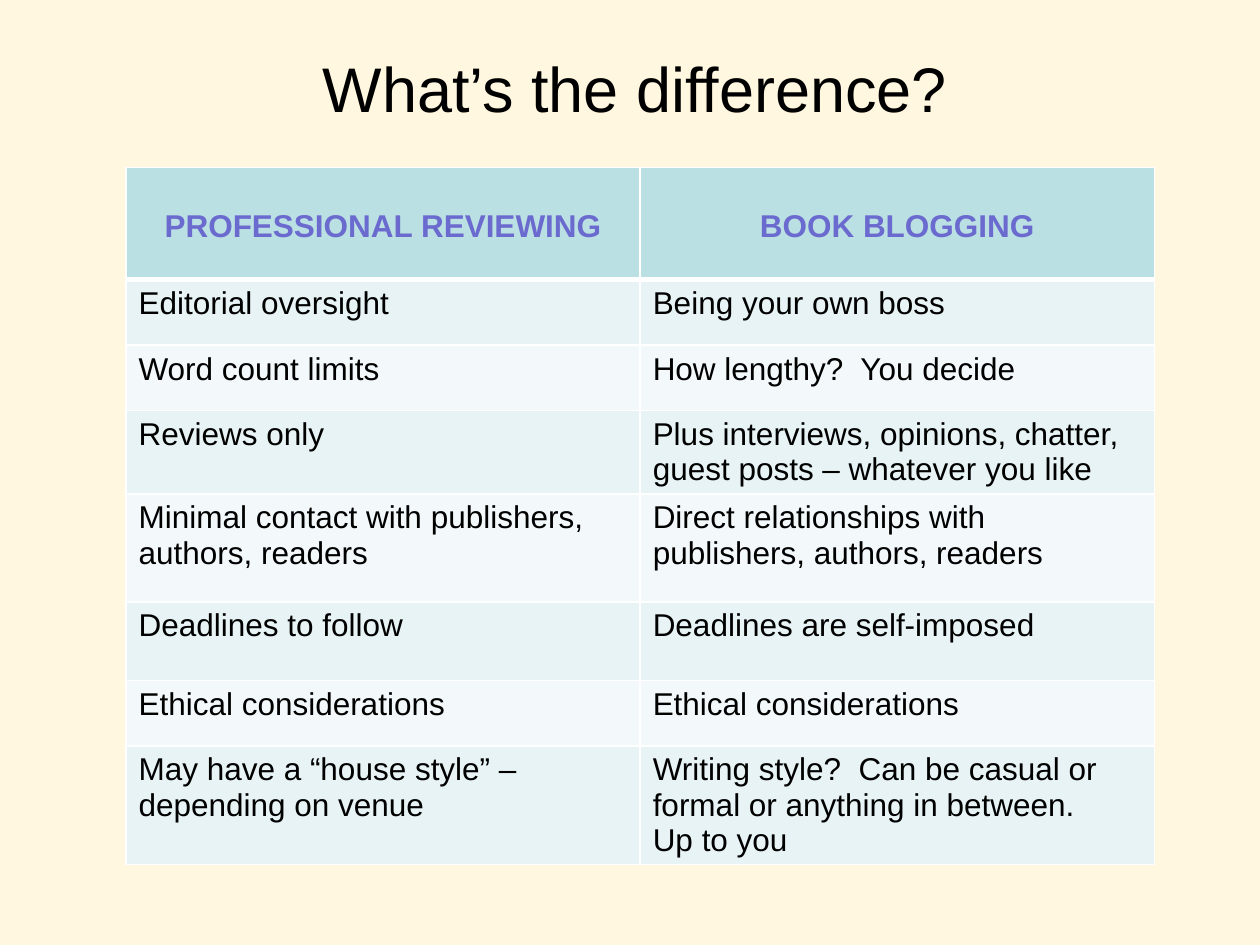
from dataclasses import dataclass

from lxml.etree import SubElement
from pptx import Presentation
from pptx.dml.color import RGBColor
from pptx.enum.text import MSO_ANCHOR as Anchor, PP_ALIGN as Align
from pptx.oxml.ns import qn
from pptx.util import Cm, Pt

FONT = "Arial"
COLOURS = {
    "page": "FFF7DF",
    "title": "000000",
    "header_text": "6B6BCF",
    "header_fill": "BBE0E3",
    "body_text": "000000",
    "odd_fill": "E7F3F4",
    "even_fill": "F3F9FA",
    "border": "FFFFFF",
}
THIN, THICK = 1, 3


@dataclass
class Row:
    height: float
    reviewing: str
    blogging: str


ROWS = [
    Row(2.26, "PROFESSIONAL REVIEWING", "BOOK BLOGGING"),
    Row(1.32, "Editorial oversight", "Being your own boss"),
    Row(1.32, "Word count limits", "How lengthy?  You decide"),
    Row(1.66, "Reviews only",
        "Plus interviews, opinions, chatter, guest posts – whatever you like"),
    Row(2.18, "Minimal contact with publishers, authors, readers",
        "Direct relationships with publishers, authors, readers"),
    Row(1.58, "Deadlines to follow", "Deadlines are self-imposed"),
    Row(1.32, "Ethical considerations", "Ethical considerations"),
    Row(2.38, "May have a “house style” – depending on venue",
        "Writing style?  Can be casual or formal or anything in between.\nUp to you"),
]


def colour(name: str) -> RGBColor:
    return RGBColor.from_string(COLOURS[name])


def write(frame, text: str, *, size: float, ink: str, bold: bool = False,
          align: Align = Align.LEFT) -> None:
    """Fill a text frame, one paragraph for each line of text."""
    frame.text = text
    for para in frame.paragraphs:
        para.alignment = align
        for span in para.runs:
            span.font.name = FONT
            span.font.size = Pt(size)
            span.font.bold = bold
            span.font.color.rgb = colour(ink)


def set_borders(cell, top: float, bottom: float) -> None:
    properties = cell._tc.get_or_add_tcPr()
    for side, width in {"L": THIN, "R": THIN, "T": top, "B": bottom}.items():
        line = SubElement(properties, qn(f"a:ln{side}"), w=str(Pt(width)))
        fill = SubElement(line, qn("a:solidFill"))
        SubElement(fill, qn("a:srgbClr"), val=COLOURS["border"])


def draw_cell(cell, text: str, index: int) -> None:
    header = index == 0
    set_borders(cell, top=THICK if index == 1 else THIN,
                bottom=THICK if header else THIN)
    cell.fill.solid()
    if header:
        cell.fill.fore_color.rgb = colour("header_fill")
        cell.margin_top = Cm(0.84)
        write(cell.text_frame, text, size=18, ink="header_text", bold=True,
              align=Align.CENTER)
    else:
        cell.fill.fore_color.rgb = colour("odd_fill" if index % 2 else "even_fill")
        write(cell.text_frame, text, size=18, ink="body_text")


def draw_table(page, rows: list[Row]) -> None:
    height = sum(row.height for row in rows)
    table = page.shapes.add_table(len(rows), 2, Cm(2.54), Cm(3.38),
                                  Cm(20.73), Cm(height)).table
    for index, row in enumerate(rows):
        table.rows[index].height = Cm(row.height)
        for column, text in enumerate((row.reviewing, row.blogging)):
            draw_cell(table.cell(index, column), text, index)


def draw_title(page, text: str) -> None:
    box = page.shapes.title
    box.left, box.top, box.width, box.height = Cm(1.47), Cm(0.86), Cm(22.66), Cm(1.8)
    box.text_frame.vertical_anchor = Anchor.MIDDLE
    write(box.text_frame, text, size=36, ink="title", align=Align.CENTER)


def main() -> None:
    deck = Presentation()
    deck.slide_width, deck.slide_height = Cm(25.4), Cm(19.05)
    page = deck.slides.add_slide(deck.slide_layouts.get_by_name("Title Only"))
    page.background.fill.solid()
    page.background.fill.fore_color.rgb = colour("page")
    draw_table(page, ROWS)
    draw_title(page, "What’s the difference?")
    deck.save("out.pptx")


if __name__ == "__main__":
    main()
